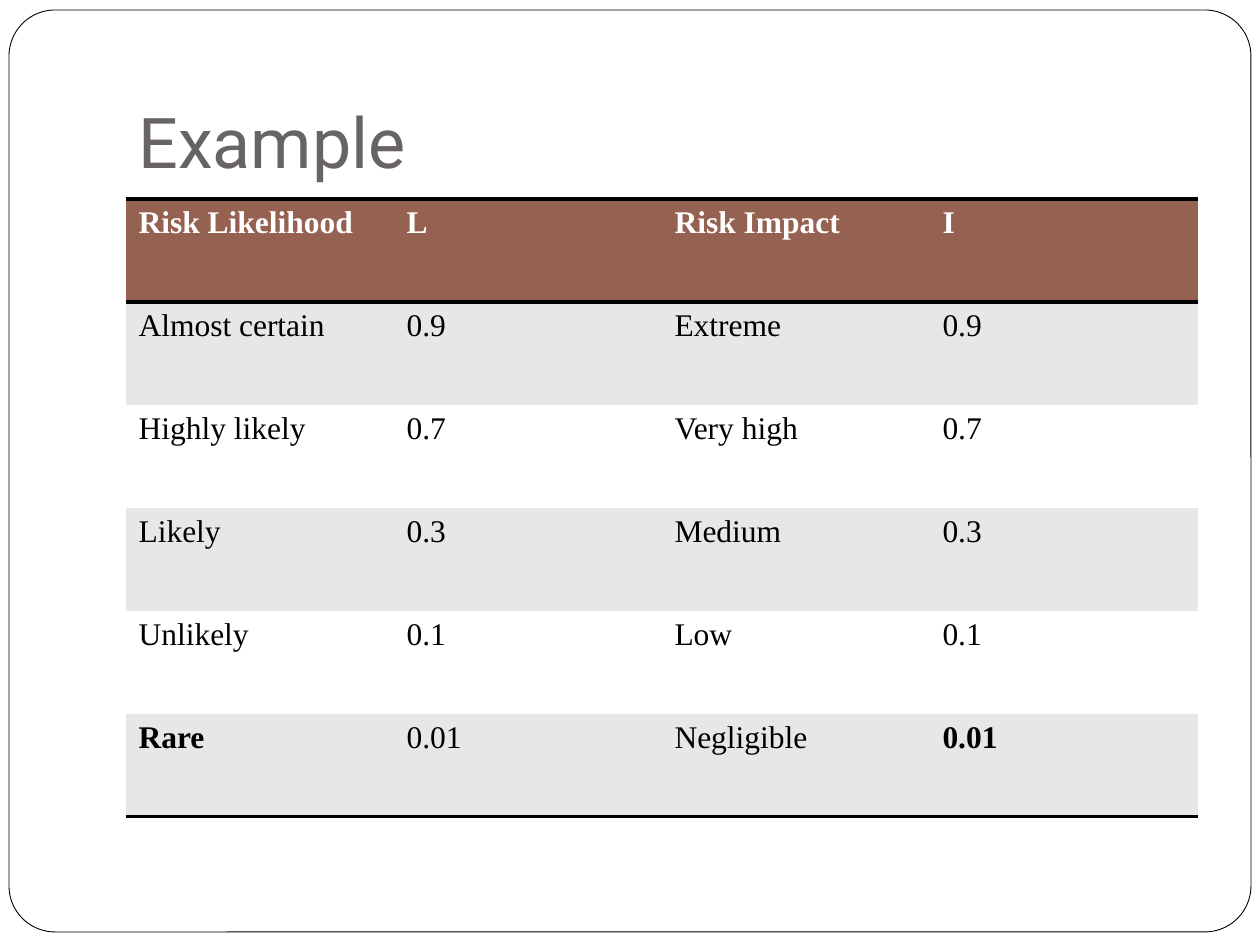
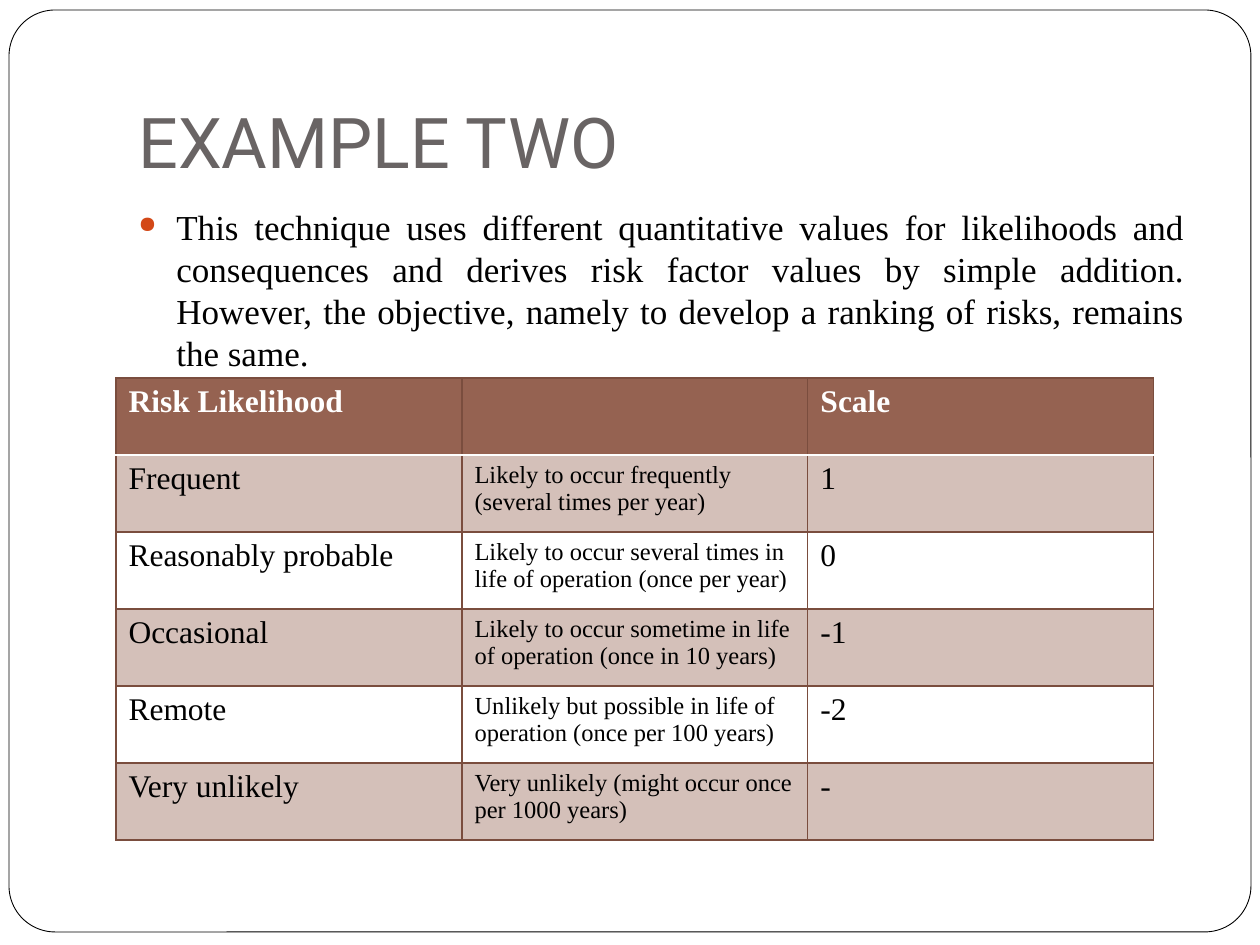
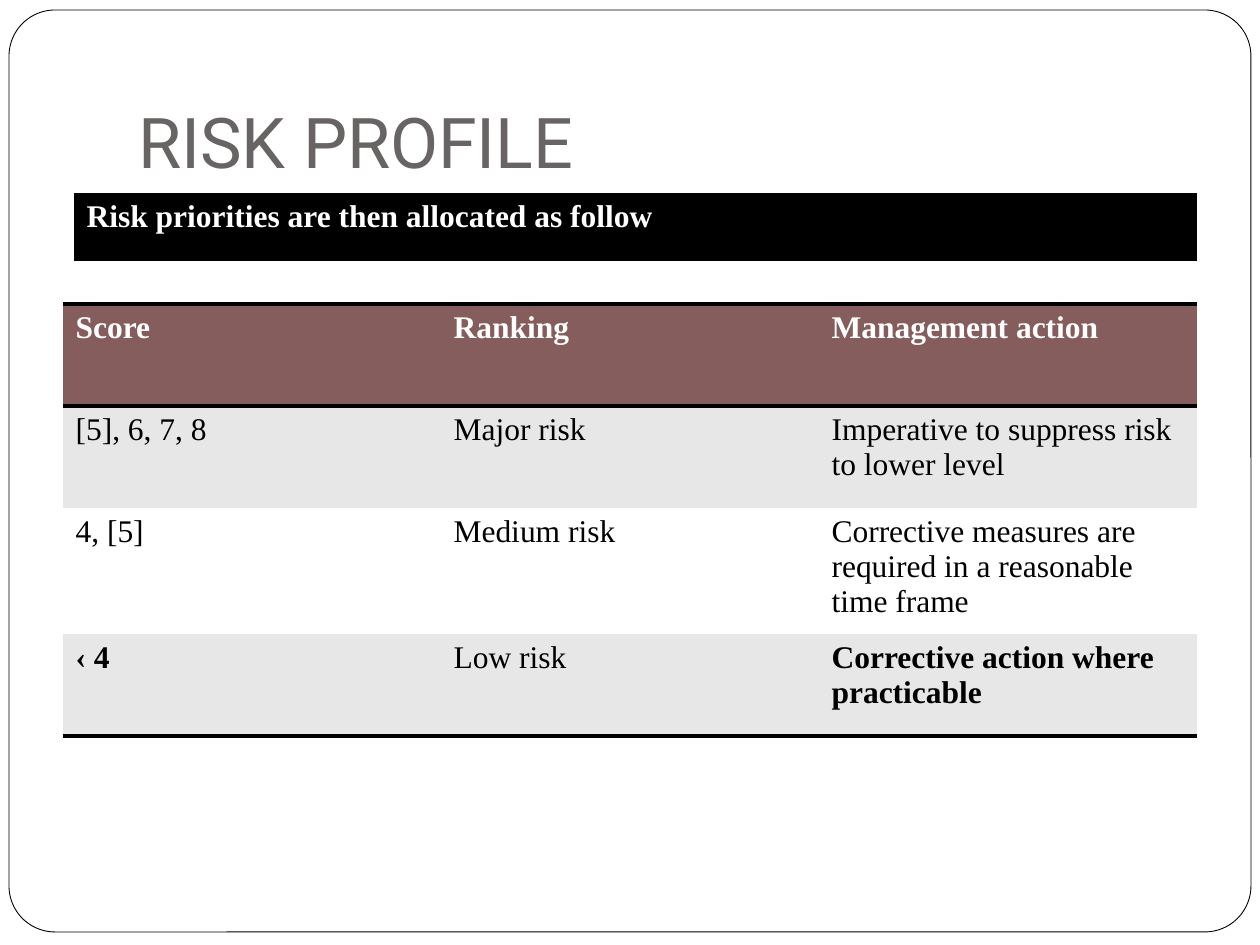
from lxml.etree import SubElement
from pptx import Presentation
from pptx.dml.color import RGBColor
from pptx.enum.shapes import MSO_SHAPE
from pptx.enum.text import MSO_ANCHOR, PP_ALIGN
from pptx.oxml.ns import qn
from pptx.util import Emu, Pt

WHITE = RGBColor(0xFF, 0xFF, 0xFF)
BLACK = RGBColor(0x00, 0x00, 0x00)
GREY = RGBColor(0x69, 0x64, 0x64)
PALE = RGBColor(0xE7, 0xE7, 0xE7)
BROWN = RGBColor(0x95, 0x62, 0x51)
DARK_BROWN = RGBColor(0x7A, 0x4D, 0x3E)
MAUVE = RGBColor(0x85, 0x5D, 0x5D)
ORANGE = RGBColor(0xD3, 0x48, 0x17)

TITLE_FONT = "Roboto"
BODY_FONT = "Times New Roman"
PX_PER_INCH = 126

HEAVY = (BLACK, 2)
THIN = (DARK_BROWN, 0.75)

LIKELIHOOD_IMPACT = {
    "place": (126, 199), "column": 268, "row": 103,
    "header": BROWN, "bands": [(PALE, 100), (WHITE, 100)],
    "rules": {0: HEAVY, 1: HEAVY, 6: HEAVY},
    "bold": {(5, 0), (5, 3)},
    "rows": [
        ("Risk Likelihood", "L", "Risk Impact", "I"),
        ("Almost certain", "0.9", "Extreme", "0.9"),
        ("Highly likely", "0.7", "Very high", "0.7"),
        ("Likely", "0.3", "Medium", "0.3"),
        ("Unlikely", "0.1", "Low", "0.1"),
        ("Rare", "0.01", "Negligible", "0.01"),
    ],
}

FREQUENCY_SCALE = {
    "place": (116, 378), "column": 346, "row": 77,
    "header": BROWN, "bands": [(BROWN, 40), (None, 100)],
    "rules": {**{index: THIN for index in range(7)}, 1: (WHITE, 1)},
    "vertical": THIN, "sizes": {1: 14},
    "rows": [
        ("Risk Likelihood", "", "Scale"),
        ("Frequent", "Likely to occur frequently (several times per year)", "1"),
        ("Reasonably probable", "Likely to occur several times in life of operation (once per year)", "0"),
        ("Occasional", "Likely to occur sometime in life of operation (once in 10 years)", "-1"),
        ("Remote", "Unlikely but possible in life of operation (once per 100 years)", "-2"),
        ("Very unlikely", "Very unlikely (might occur once per 1000 years)", "-"),
    ],
}

RANKING_ACTION = {
    "place": (63, 304), "column": 378, "row": 102, "tall": {2: 118},
    "header": MAUVE, "bands": [(PALE, 100), (WHITE, 100)],
    "rules": {0: HEAVY, 1: HEAVY, 4: HEAVY},
    "bold": {(3, 0), (3, 2)},
    "rows": [
        ("Score", "Ranking", "Management action"),
        ("[5], 6, 7, 8", "Major risk", "Imperative to suppress risk to lower level"),
        ("4, [5]", "Medium risk", "Corrective measures are required in a reasonable time frame"),
        ("‹ 4", "Low risk", "Corrective action where practicable"),
    ],
}

PRIORITY_BANNER = {
    "place": (74, 193), "column": 1123, "row": 70,
    "header": BLACK, "rules": {1: (WHITE, 2)},
    "rows": [("Risk priorities are then allocated as follow",)],
}

TECHNIQUE = (
    "This technique uses different quantitative values for likelihoods and consequences "
    "and derives risk factor values by simple addition. However, the objective, namely to "
    "develop a ranking of risks, remains the same."
)

PAGES = [
    {"title": "Example", "tables": [LIKELIHOOD_IMPACT]},
    {"title": "EXAMPLE TWO", "body": TECHNIQUE, "tables": [FREQUENCY_SCALE]},
    {"title": "RISK PROFILE", "tables": [RANKING_ACTION, PRIORITY_BANNER]},
]


def px(length):
    return Emu(round(length * 914400 / PX_PER_INCH))


def write(frame, text, size=18, color=BLACK, font=BODY_FONT, bold=False,
          align=PP_ALIGN.LEFT, bullet=None):
    para = frame.paragraphs[0]
    para.alignment = align
    if bullet:
        add_bullet(para, bullet)
    span = para.add_run()
    span.text = text
    span.font.size = Pt(size)
    span.font.name = font
    span.font.bold = bold
    span.font.color.rgb = color


def add_bullet(para, color):
    properties = para._p.get_or_add_pPr()
    indent = px(38)
    properties.set("marL", str(indent))
    properties.set("indent", str(-indent))
    tint = SubElement(properties, qn("a:buClr"))
    SubElement(tint, qn("a:srgbClr"), val=str(color))
    SubElement(properties, qn("a:buSzPct"), val="66000")
    SubElement(properties, qn("a:buChar"), char="●")


def add_text(page, place, text, anchor=MSO_ANCHOR.TOP, bottom=6, **style):
    frame = page.shapes.add_textbox(*map(px, place)).text_frame
    frame.word_wrap = True
    frame.vertical_anchor = anchor
    frame.margin_bottom = px(bottom)
    write(frame, text, **style)


def add_border(cell, side, rule):
    properties = cell._tc.get_or_add_tcPr()
    line = SubElement(properties, qn(f"a:ln{side}"))
    if rule:
        color, width = rule
        line.set("w", str(Pt(width)))
        fill = SubElement(line, qn("a:solidFill"))
        SubElement(fill, qn("a:srgbClr"), val=str(color))
    else:
        SubElement(line, qn("a:noFill"))


def fill_cell(cell, color, opacity):
    if color is None:
        cell.fill.background()
        return
    cell.fill.solid()
    cell.fill.fore_color.rgb = color
    if opacity < 100:
        tint = cell._tc.tcPr.find(qn("a:solidFill")).find(qn("a:srgbClr"))
        SubElement(tint, qn("a:alpha"), val=str(opacity * 1000))


def add_table(page, content):
    rows = content["rows"]
    width = len(rows[0])
    tall = content.get("tall", {})
    heights = [tall.get(r, content["row"]) for r in range(len(rows))]
    size = (width * content["column"], sum(heights))
    table = page.shapes.add_table(len(rows), width, *map(px, content["place"] + size)).table
    table.first_row = table.horz_banding = False
    for column in table.columns:
        column.width = px(content["column"])
    vertical = content.get("vertical")
    for r, texts in enumerate(rows):
        table.rows[r].height = px(heights[r])
        header = r == 0
        fill = (content["header"], 100) if header else content["bands"][(r - 1) % 2]
        for c, text in enumerate(texts):
            cell = table.cell(r, c)
            add_border(cell, "L", vertical)
            add_border(cell, "R", vertical)
            add_border(cell, "T", content["rules"].get(r))
            add_border(cell, "B", content["rules"].get(r + 1))
            fill_cell(cell, *fill)
            if text:
                write(cell.text_frame, text,
                      size=18 if header else content.get("sizes", {}).get(c, 18),
                      color=WHITE if header else BLACK,
                      bold=header or (r, c) in content.get("bold", ()))


def add_frame(page):
    frame = page.shapes.add_shape(MSO_SHAPE.ROUNDED_RECTANGLE, *map(px, (9, 10, 1242, 922)))
    frame.adjustments[0] = 0.05
    frame.shadow.inherit = False
    frame.fill.solid()
    frame.fill.fore_color.rgb = WHITE
    frame.line.color.rgb = BLACK
    frame.line.width = Pt(0.5)


def main():
    deck = Presentation()
    deck.slide_width, deck.slide_height = px(1260), px(945)
    for content in PAGES:
        page = deck.slides.add_slide(deck.slide_layouts[6])
        add_frame(page)
        add_text(page, (126, 38, 1071, 157), content["title"], anchor=MSO_ANCHOR.BOTTOM,
                 bottom=13, size=40, color=GREY, font=TITLE_FONT)
        if "body" in content:
            add_text(page, (126, 199, 1071, 630), content["body"], size=20,
                     align=PP_ALIGN.JUSTIFY, bullet=ORANGE)
        for table in content["tables"]:
            add_table(page, table)
    deck.save("out.pptx")


if __name__ == "__main__":
    main()
